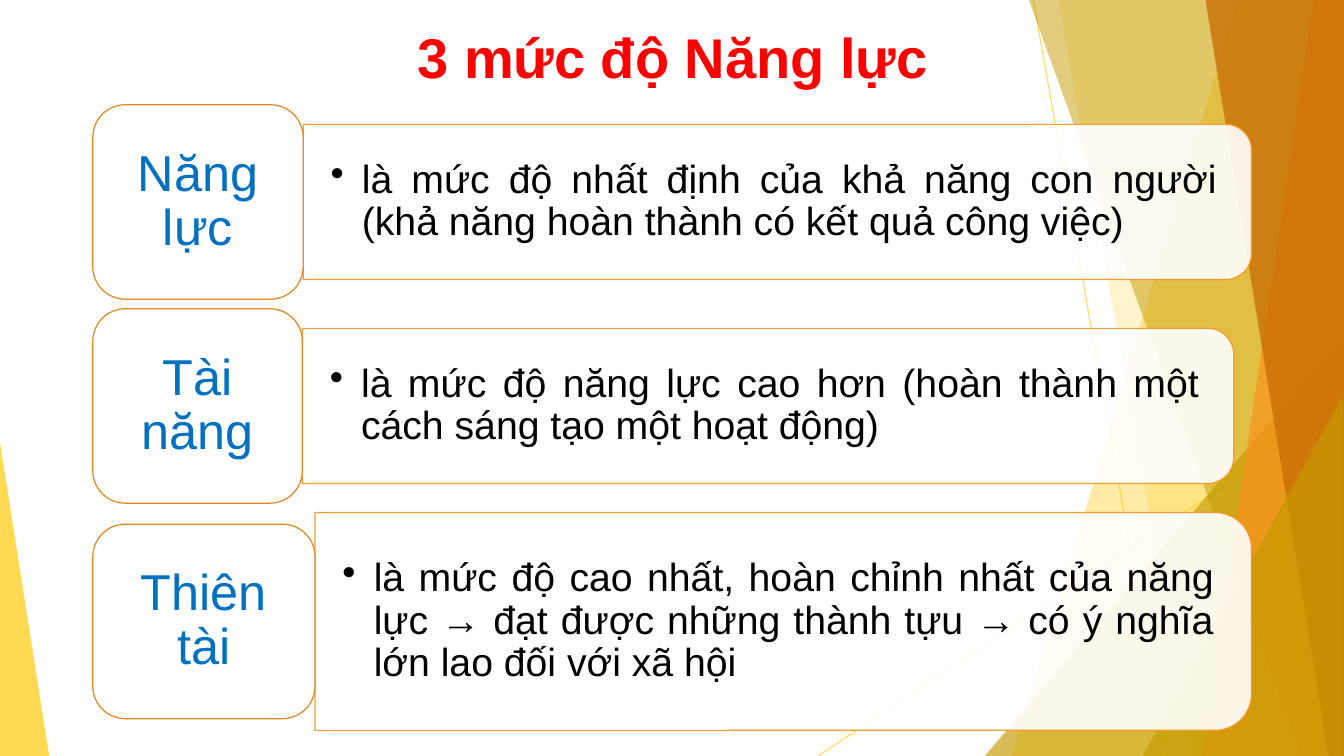
from dataclasses import dataclass

import lxml.etree
import pptx
import pptx.dml.color
import pptx.enum.shapes
import pptx.enum.text
import pptx.oxml.ns
import pptx.util

Cm = pptx.util.Cm
Pt = pptx.util.Pt
RGBColor = pptx.dml.color.RGBColor
Kind = pptx.enum.shapes.MSO_SHAPE
Align = pptx.enum.text.PP_ALIGN
Anchor = pptx.enum.text.MSO_ANCHOR
qn = pptx.oxml.ns.qn

WHITE = RGBColor(0xFF, 0xFF, 0xFF)
BLACK = RGBColor(0, 0, 0)
RED = RGBColor(0xFF, 0, 0)
BLUE = RGBColor(0x00, 0x70, 0xC0)
GOLD = RGBColor(0xFF, 0xCA, 0x08)
OLIVE = RGBColor(0xC5, 0x9B, 0x00)
ORANGE = RGBColor(0xF8, 0x93, 0x1D)
RUST = RGBColor(0xCA, 0x6F, 0x06)
AMBER = RGBColor(0xE1, 0x85, 0x1A)

WIDE, HIGH = 33.87, 19.05
LEFT, SIDE = 2.34, 4.9  # left edge and height of the tiles
CURVE = 0.0488  # text inset of a rounded corner, as a share of the short side


@dataclass
class Ray:
    x1: float
    y1: float
    x2: float
    y2: float


@dataclass
class Band:
    """Area from a slanted left side to the right slide edge."""
    top: float
    base: float
    hue: RGBColor
    alpha: int


@dataclass
class Wedge:
    """Right triangle standing on the bottom slide edge."""
    left: float
    top: float
    width: float
    apex: float
    hue: RGBColor
    alpha: int


@dataclass
class Level:
    name: str
    text: str
    mid: float
    tile: float
    width: float
    height: float


DECOR = [
    Ray(26.04, 0, 29.41, HIGH),
    Ray(WIDE, 10.24, 20.62, HIGH),
    Band(31.19, 25.5, GOLD, 36),
    Band(26.67, 30.05, GOLD, 20),
    Wedge(24.82, 8.46, 9.04, 1, OLIVE, 66),
    Band(25.93, 32.79, OLIVE, 50),
    Band(33.1, 30.28, ORANGE, 70),
    Band(30.38, 33.48, RUST, 80),
    Wedge(28.8, 9.98, 5.05, 1, OLIVE, 66),
    Wedge(0, 11.15, 1.24, 0, GOLD, 70),
]

LEVELS = [
    Level("Năng lực", "là mức độ nhất định của khả năng con người "
          "(khả năng hoàn thành có kết quả công việc)", 5.09, 5.3, 23.9, 3.91),
    Level("Tài năng", "là mức độ năng lực cao hơn "
          "(hoàn thành một cách sáng tạo một hoạt động)", 10.23, 5.28, 23.47, 3.91),
    Level("Thiên tài", "là mức độ cao nhất, hoàn chỉnh nhất của năng lực "
          "→ đạt được những thành tựu → có ý nghĩa lớn lao đối với xã hội",
          15.66, 5.6, 23.6, 5.49),
]


def fade(shape, alpha: int) -> None:
    for hue in shape._element.spPr.iter(qn("a:srgbClr")):
        lxml.etree.SubElement(hue, qn("a:alpha"), val=str(alpha * 1000))


def paint(shape, fill: RGBColor, line: RGBColor | None = None, alpha: int = 100) -> None:
    shape.shadow.inherit = False
    shape.fill.solid()
    shape.fill.fore_color.rgb = fill
    if line is None:
        shape.line.fill.background()
    else:
        shape.line.color.rgb = line
        shape.line.width = Pt(0.85)
    if alpha < 100:
        fade(shape, alpha)


def write(shape, text: str, size: int, hue: RGBColor, align, pad: tuple[float, float],
          anchor=Anchor.MIDDLE, space: float = 0.9, bold: bool = False):
    frame = shape.text_frame
    frame.word_wrap = True
    frame.vertical_anchor = anchor
    frame.margin_left = frame.margin_right = Cm(pad[0])
    frame.margin_top = frame.margin_bottom = Cm(pad[1])
    para = frame.paragraphs[0]
    para.alignment = align
    para.line_spacing = space
    run = para.add_run()
    run.text = text
    run.font.name = "Arial"
    run.font.size = Pt(size)
    run.font.bold = bold
    run.font.color.rgb = hue
    return para


def draw_decor(shapes, part: Ray | Band | Wedge) -> None:
    if isinstance(part, Ray):
        line = shapes.add_connector(
            pptx.enum.shapes.MSO_CONNECTOR.STRAIGHT,
            Cm(part.x1), Cm(part.y1), Cm(part.x2), Cm(part.y2))
        line.line.color.rgb = GOLD
        line.line.width = Pt(0.75)
        lxml.etree.SubElement(line._element.spPr, qn("a:effectLst"))
        fade(line, 70)
    elif isinstance(part, Band):
        path = shapes.build_freeform(Cm(part.top), Cm(0), scale=1.0)
        path.add_line_segments([(Cm(WIDE), Cm(0)), (Cm(WIDE), Cm(HIGH)),
                                (Cm(part.base), Cm(HIGH))], close=True)
        paint(path.convert_to_shape(), part.hue, alpha=part.alpha)
    else:
        wedge = shapes.add_shape(Kind.ISOSCELES_TRIANGLE, Cm(part.left), Cm(part.top),
                                 Cm(part.width), Cm(HIGH - part.top))
        wedge.adjustments[0] = part.apex
        paint(wedge, part.hue, alpha=part.alpha)


def draw_level(shapes, row: Level) -> None:
    # Panel: turned a quarter so that its round corners face right
    start = LEFT + row.tile
    centre = start + row.width / 2
    panel = shapes.add_shape(
        Kind.ROUND_2_SAME_RECTANGLE, Cm(centre - row.height / 2),
        Cm(row.mid - row.width / 2), Cm(row.height), Cm(row.width))
    panel.rotation = 90
    paint(panel, WHITE, ORANGE, 90)

    # Bulleted text on the panel
    inset = row.height * CURVE
    box = shapes.add_textbox(Cm(start), Cm(row.mid - row.height / 2 + inset),
                             Cm(row.width - inset), Cm(row.height - 2 * inset))
    para = write(box, row.text, 28, BLACK, Align.JUSTIFY, (0.69, 0.36))
    para.level = 1
    props = para._p.get_or_add_pPr()
    props.set("marL", str(Cm(0.79)))
    props.set("indent", str(-Cm(0.79)))
    lxml.etree.SubElement(props, qn("a:buChar"), char="•")

    # Tile with the name
    tile = shapes.add_shape(Kind.ROUNDED_RECTANGLE, Cm(LEFT), Cm(row.mid - SIDE / 2),
                            Cm(row.tile), Cm(SIDE))
    paint(tile, WHITE, AMBER)
    write(tile, row.name, 36, BLUE, Align.CENTER, (0.38, 0.18))


def main() -> None:
    deck = pptx.Presentation()
    deck.slide_width, deck.slide_height = Cm(WIDE), Cm(HIGH)
    shapes = deck.slides.add_slide(deck.slide_layouts[6]).shapes

    # Backdrop
    for part in DECOR:
        draw_decor(shapes, part)

    # Title
    title = shapes.add_textbox(Cm(LEFT), Cm(0.33), Cm(29.21), Cm(2.62))
    write(title, "3 mức độ Năng lực", 40, RED, Align.CENTER, (0.25, 0.25),
          Anchor.TOP, 1.0, True)

    # Levels
    for row in LEVELS:
        draw_level(shapes, row)

    deck.save("out.pptx")


if __name__ == "__main__":
    main()
